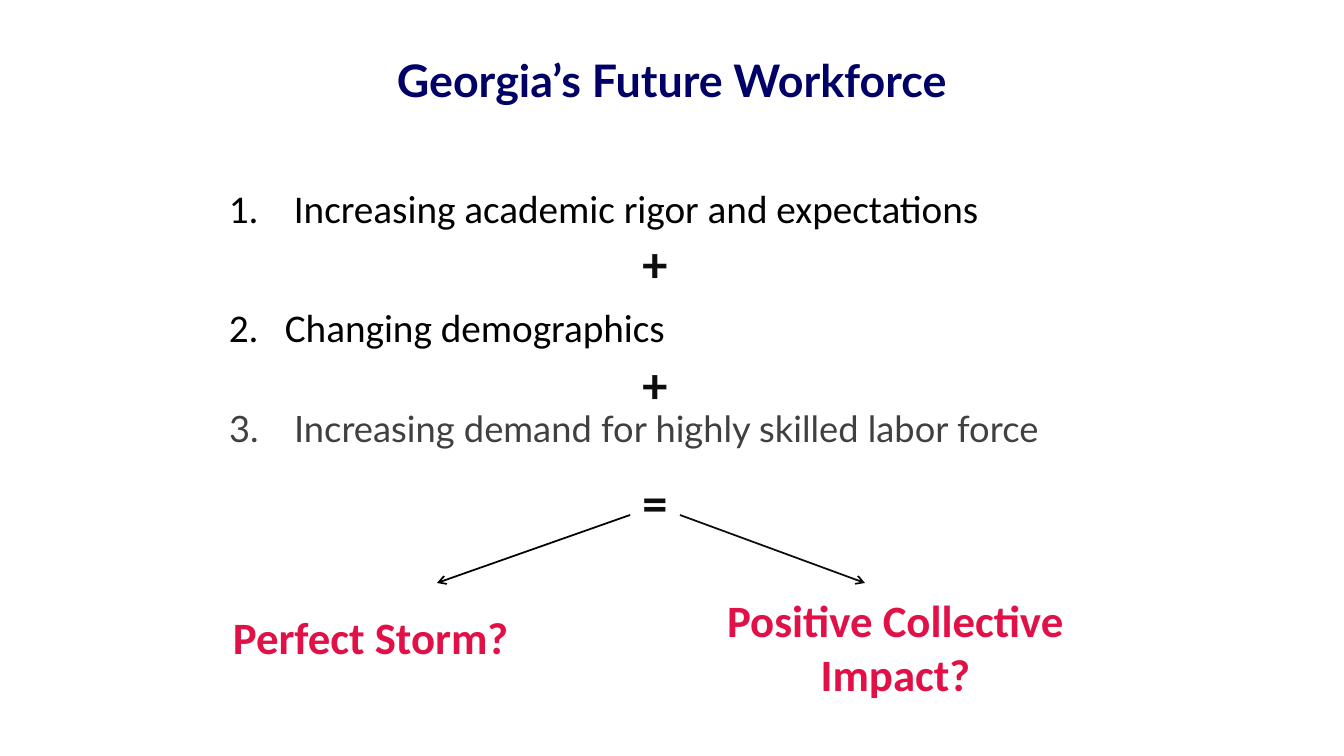
from lxml import etree
from pptx import Presentation
from pptx.dml.color import RGBColor
from pptx.enum.shapes import MSO_CONNECTOR
from pptx.enum.text import MSO_ANCHOR, MSO_AUTO_SIZE, PP_ALIGN
from pptx.oxml.ns import qn
from pptx.util import Pt

LEFT, CENTER = PP_ALIGN.LEFT, PP_ALIGN.CENTER
TOP, MIDDLE = MSO_ANCHOR.TOP, MSO_ANCHOR.MIDDLE
STRAIGHT = MSO_CONNECTOR.STRAIGHT
NO_AUTOFIT = MSO_AUTO_SIZE.NONE

COLORS = {"navy": "000066", "black": "000000", "ink": "0D0D0D",
          "gray": "404040", "red": "E11148"}

# Boxes are (left, top, width, height) in px.
SLIDE_SIZE = (1344, 756)
TITLE = ("Georgia’s Future Workforce", (168, 53, 1008, 60))
FACTORS = [  # text, box, hanging indent
    ("1.\tIncreasing academic rigor and expectations", (219, 179, 890, 58), 65),
    ("2.\tChanging demographics", (219, 298, 924, 58), 56),
]
DEMAND = ("3.\tIncreasing demand for highly skilled labor force", (219, 406, 907, 68), 65)
OPERATORS = [("+", 227), ("+", 348), ("=", 466)]  # sign, top
OPERATOR_CENTER, OPERATOR_SIZE = 655, (68, 71)
OUTCOMES = [  # lines, box, alignment
    (["Perfect Storm?"], (223, 605, 320, 64), LEFT),
    (["Positive Collective", "Impact?"], (597, 588, 597, 119), CENTER),
]
ARROWS = [((630, 515), (437, 583), "black"), ((680, 515), (865, 583), "ink")]


def px(value):
    return round(value * 914400 / 100.8)


def write_text(shape, lines, box=None, size=28, color="black", font="Calibri",
               bold=False, align=LEFT, anchor=TOP, hanging=0, line_spacing=1.0):
    if box:
        shape.left, shape.top, shape.width, shape.height = map(px, box)
    frame = shape.text_frame
    frame.word_wrap = True
    frame.auto_size = NO_AUTOFIT
    frame.vertical_anchor = anchor
    frame.text = "\n".join(lines)
    for paragraph in frame.paragraphs:
        properties = paragraph._p.get_or_add_pPr()
        properties.set("marL", str(px(hanging)))
        properties.set("indent", str(-px(hanging)))
        etree.SubElement(properties, qn("a:buNone"))
        paragraph.alignment = align
        paragraph.line_spacing = line_spacing
        paragraph.space_before = Pt(0)
        paragraph.font.size = Pt(size)
        paragraph.font.name = font
        paragraph.font.bold = bold
        paragraph.font.color.rgb = RGBColor.from_string(COLORS[color])


def add_text(slide, lines, box, **text_format):
    shape = slide.shapes.add_textbox(*map(px, box))
    write_text(shape, lines, **text_format)


def add_arrow(slide, start, end, color):
    arrow = slide.shapes.add_connector(STRAIGHT, *map(px, start + end))
    arrow.line.width = Pt(1.25)
    arrow.line.color.rgb = RGBColor.from_string(COLORS[color])
    etree.SubElement(arrow.line._get_or_add_ln(), qn("a:tailEnd"), type="arrow")
    etree.SubElement(arrow._element.spPr, qn("a:effectLst"))


def main():
    presentation = Presentation()
    presentation.slide_width, presentation.slide_height = map(px, SLIDE_SIZE)
    slide = presentation.slides.add_slide(presentation.slide_layouts[1])
    title, body = slide.placeholders

    text, box = TITLE
    write_text(title, [text], box, size=32, color="navy", font="Lato", bold=True,
               align=CENTER, anchor=MIDDLE, line_spacing=0.9)
    text, box, hanging = DEMAND
    write_text(body, [text], box, size=25.9, color="gray", font="Lato",
               hanging=hanging, line_spacing=0.9)

    for text, box, hanging in FACTORS:
        add_text(slide, [text], box, hanging=hanging)
    width, height = OPERATOR_SIZE
    for sign, top in OPERATORS:
        add_text(slide, [sign], (OPERATOR_CENTER - width / 2, top, width, height),
                 size=36, color="ink", bold=True, align=CENTER)
    for start, end, color in ARROWS:
        add_arrow(slide, start, end, color)
    for lines, box, align in OUTCOMES:
        add_text(slide, lines, box, size=32, color="red", bold=True, align=align)

    presentation.save("out.pptx")


if __name__ == "__main__":
    main()
